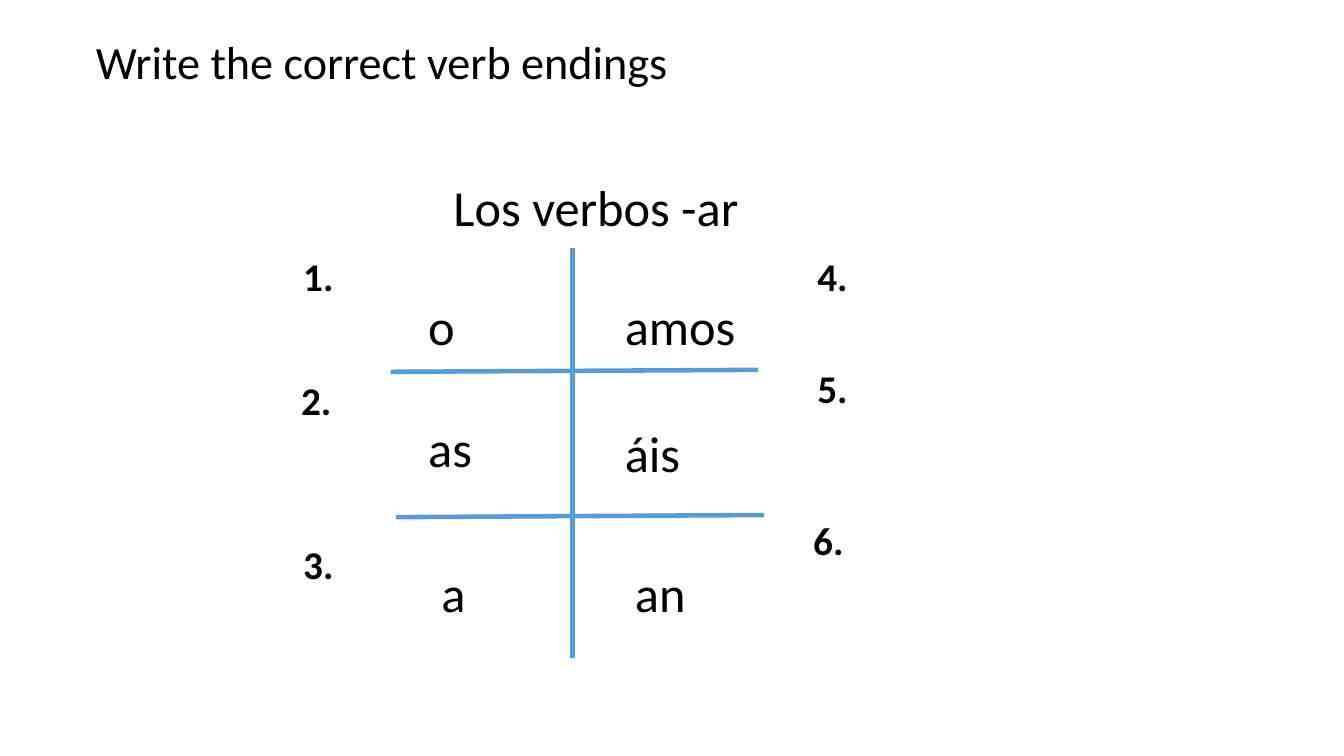
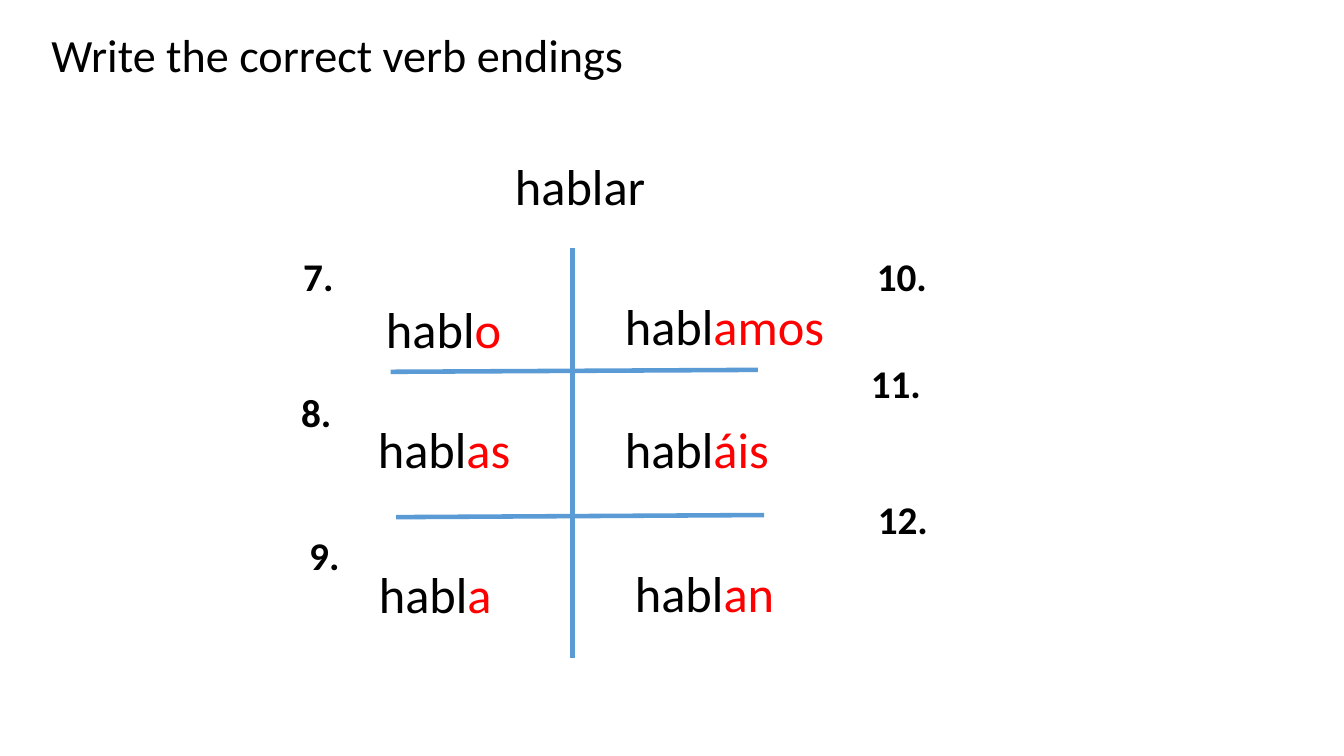
from dataclasses import dataclass
from itertools import chain

from lxml.etree import SubElement
from pptx import Presentation
from pptx.dml.color import RGBColor as Rgb
from pptx.enum.shapes import MSO_CONNECTOR as Link
from pptx.enum.text import MSO_ANCHOR as Anchor, PP_ALIGN as Align
from pptx.oxml.ns import qn
from pptx.util import Pt


@dataclass(frozen=True)
class Theme:
    font: str = "Calibri"
    ink: Rgb = Rgb(0, 0, 0)
    mark: Rgb = Rgb(255, 0, 0)
    rule: Rgb = Rgb(0x5B, 0x9B, 0xD5)
    title: int = 33
    verb: int = 36
    num: int = 28


THEME = Theme()
GRID = (279, 177)
RULES = (
    ((130, 0), (130, 293), 3),
    ((0, 88.6), (262.4, 87.2), 3.25),
    ((4, 192.4), (266.8, 190.9), 3.25),
)
ENDS = ("o", "as", "a", "amos", "áis", "an")
TASKS = (
    dict(
        title=(61.2, 20.2), head="Los verbos -ar", top=(37.8, -54.6),
        stem="", first=1,
        forms=((19.8, 30.4), (19.8, 117.5), (29.2, 221.2),
               (160.2, 30.4), (160.2, 121), (167.4, 221.2)),
        nums=((-69.5, 0), (-71, 88.6), (-69.5, 205.3),
              (297.7, 0), (297.7, 80), (294.8, 188)),
    ),
    dict(
        title=(29.5, 15.1), head="hablar", top=(81.7, -69.7),
        stem="habl", first=7,
        forms=((-10.4, 32.5), (-16.2, 118.2), (-15.5, 221.9),
               (160.2, 30.4), (160.2, 118.2), (167.4, 221.2)),
        nums=((-69.5, 0), (-71, 96.6), (-65.2, 198.8),
              (340.2, -0.6), (335.9, 76.4), (340.9, 173.6)),
    ),
)


def shift(box, spot):
    return box[0] + spot[0], box[1] + spot[1]


def write(shape, parts, size, bold=False):
    frame = shape.text_frame
    frame.word_wrap = True
    frame.vertical_anchor = Anchor.TOP
    para = frame.paragraphs[0]
    para.alignment = Align.LEFT
    font = para.font
    font.name, font.size, font.bold = THEME.font, Pt(size), bold
    font.color.rgb = THEME.ink
    for text, color in parts:
        run = para.add_run()
        run.text = text
        if color != THEME.ink:
            run.font.color.rgb = color


def label(slide, spot, size, parts, kind, bold=False):
    shape = slide.shapes.add_textbox(*map(Pt, chain(spot, size)))
    write(shape, parts, kind, bold)


def title(slide, spot):
    shape = slide.shapes.title
    shape.left, shape.top, shape.width, shape.height = map(Pt, (*spot, 537, 47.5))
    write(shape, [("Write the correct verb endings", THEME.ink)], THEME.title)


def grid(slide, box):
    for start, end, width in RULES:
        ends = chain(shift(box, start), shift(box, end))
        line = slide.shapes.add_connector(Link.STRAIGHT, *map(Pt, ends))
        line.line.color.rgb = THEME.rule
        line.line.width = Pt(width)
        SubElement(line._element.spPr, qn("a:effectLst"))


def verbs(slide, box, task):
    label(slide, shift(box, task["top"]), (240, 51),
          [(task["head"], THEME.ink)], THEME.verb)
    stem = task["stem"]
    for end, spot in zip(ENDS, task["forms"]):
        parts = [(stem, THEME.ink), (end, THEME.mark)] if stem else [(end, THEME.ink)]
        label(slide, shift(box, spot), (165, 51), parts, THEME.verb)


def numbers(slide, box, task):
    for num, spot in enumerate(task["nums"], task["first"]):
        label(slide, shift(box, spot), (51, 41),
              [(f"{num}.", THEME.ink)], THEME.num, True)


def main():
    deck = Presentation()
    deck.slide_width, deck.slide_height = Pt(960), Pt(540)
    for task in TASKS:
        slide = deck.slides.add_slide(deck.slide_layouts[5])
        title(slide, task["title"])
        grid(slide, GRID)
        verbs(slide, GRID, task)
        numbers(slide, GRID, task)
    deck.save("out.pptx")


if __name__ == "__main__":
    main()
